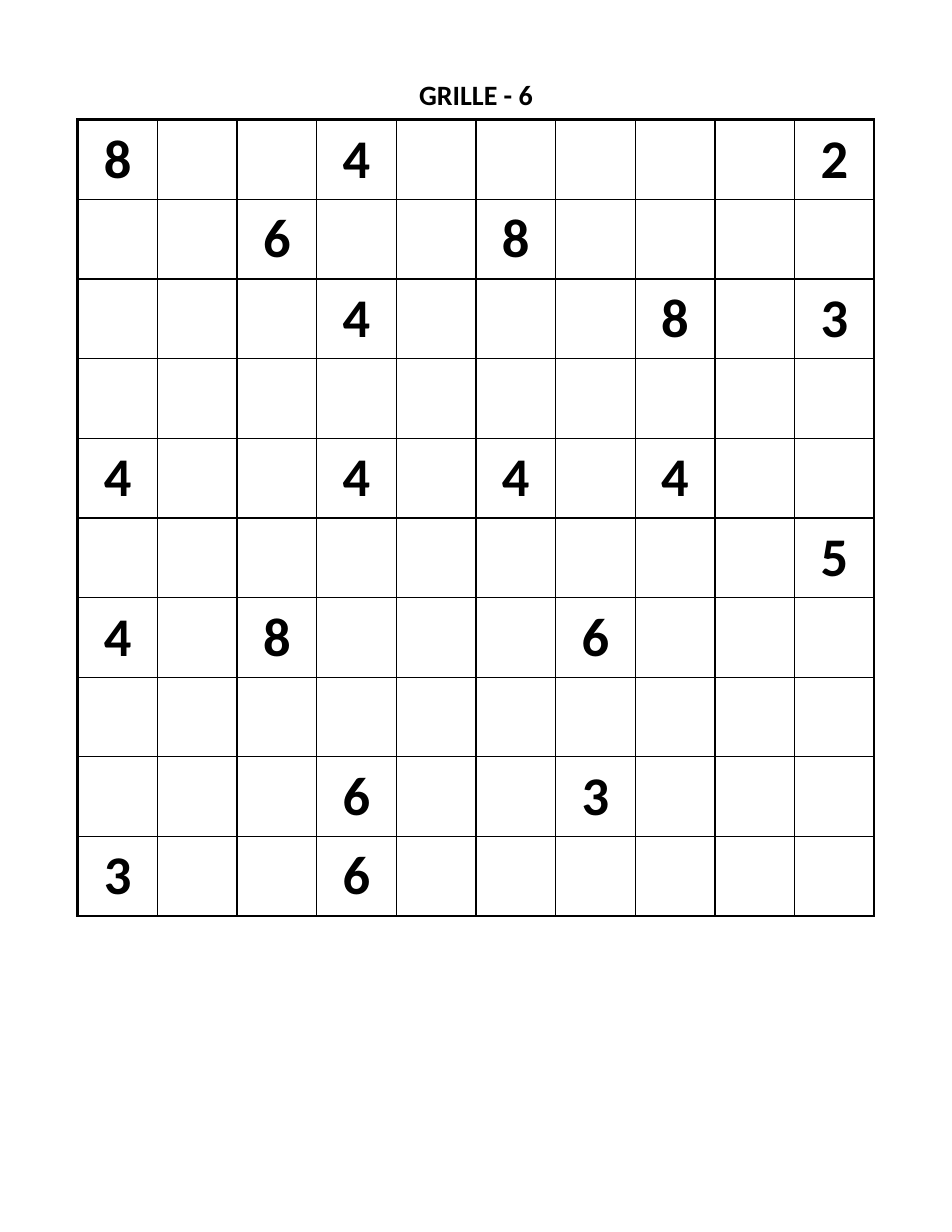
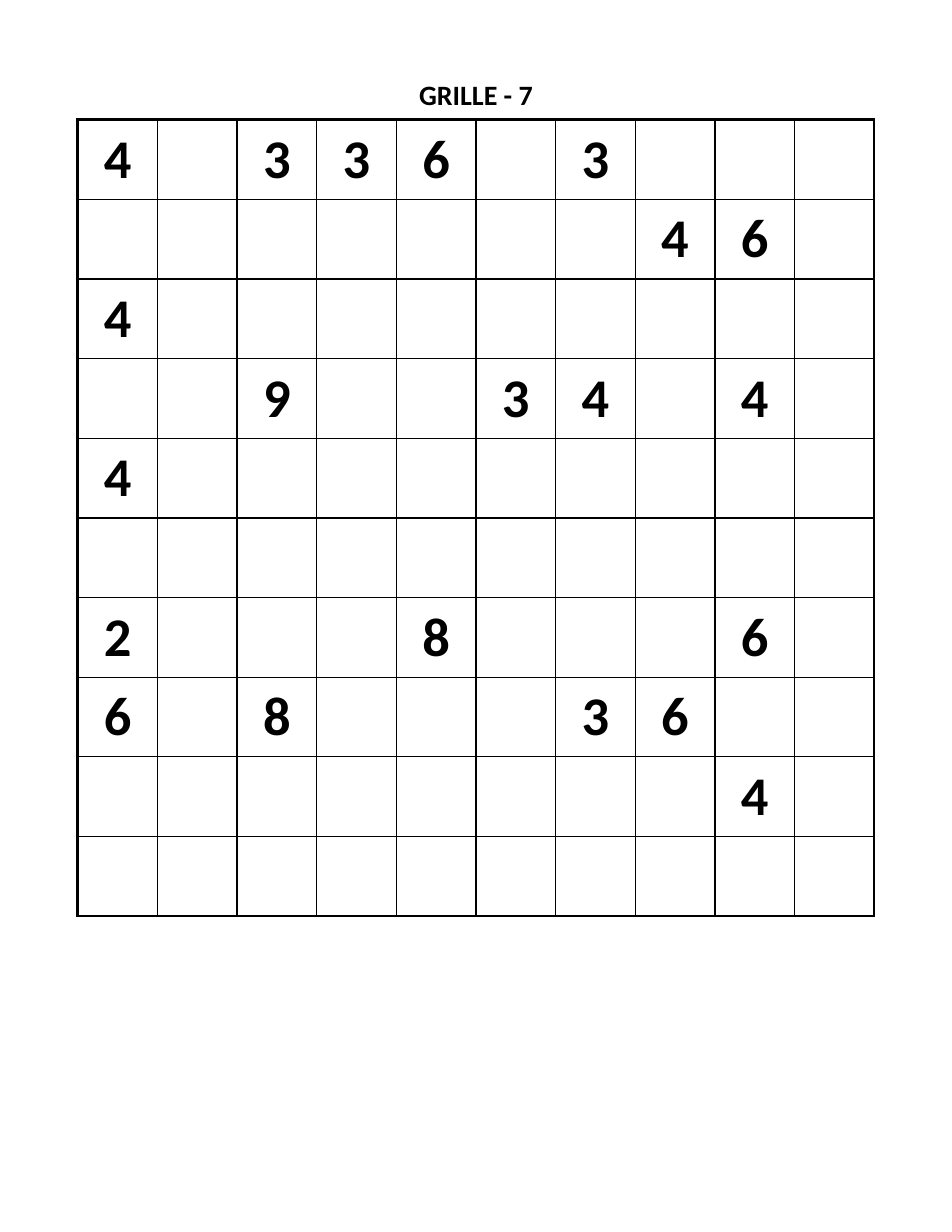
from pptx import Presentation
from pptx import util as u
from pptx.dml.color import RGBColor
from pptx.enum import text
from pptx.oxml import parse_xml
from pptx.oxml.ns import nsdecls

COLORS = {"ink": "000000", "paper": "FFFFFF"}
FONT = "Calibri"

# Shared layout, in points
PAGE_W, PAGE_H = 612, 792
MARGIN = 50
TITLE_H = 22
GRID_TOP = 77
SIZE = 10
CELL = 51.2
THIN, THICK = 1, 2

# Clues of each grid; a dot is an empty cell
GRIDS = {
    6: ["8..4.....2",
        "..6..8....",
        "...4...8.3",
        "..........",
        "4..4.4.4..",
        ".........5",
        "4.8...6...",
        "..........",
        "...6..3...",
        "3..6......"],
    7: ["4.336.3...",
        ".......46.",
        "4.........",
        "..9..34.4.",
        "4.........",
        "..........",
        "2...8...6.",
        "6.8...36..",
        "........4.",
        ".........."],
}


def rgb(name):
    return RGBColor.from_string(COLORS[name])


def write(tf, words, size):
    """Put one centred bold line into a text frame."""
    tf.text = words
    p = tf.paragraphs[0]
    p.alignment = text.PP_ALIGN.CENTER
    for r in p.runs:
        r.font.name, r.font.size, r.font.bold = FONT, u.Pt(size), True
        r.font.color.rgb = rgb("ink")


def add_title(slide, words):
    sp = slide.shapes.title
    sp.left, sp.top = u.Pt(MARGIN), u.Pt(MARGIN)
    sp.width, sp.height = u.Pt(PAGE_W - 2 * MARGIN), u.Pt(TITLE_H)
    tf = sp.text_frame
    tf.margin_left = tf.margin_right = tf.margin_top = tf.margin_bottom = 0
    tf.vertical_anchor = text.MSO_ANCHOR.TOP
    tf.word_wrap = True
    tf.auto_size = text.MSO_AUTO_SIZE.SHAPE_TO_FIT_TEXT
    write(tf, words, 18)


def set_borders(cell, row, col):
    """Thick lines on the outer edge of the grid, thin ones inside."""
    last = SIZE - 1
    outer = {"L": col == 0, "R": col == last, "T": row == 0, "B": row == last}
    tcPr = cell._tc.get_or_add_tcPr()
    for i, (side, is_outer) in enumerate(outer.items()):
        width = u.Pt(THICK if is_outer else THIN)
        tcPr.insert(i, parse_xml(
            f'<a:ln{side} {nsdecls("a")} w="{width}"><a:solidFill>'
            f'<a:srgbClr val="{COLORS["ink"]}"/></a:solidFill></a:ln{side}>'))


def add_grid(slide, clues):
    side = u.Pt(SIZE * CELL)
    table = slide.shapes.add_table(
        SIZE, SIZE, u.Pt(MARGIN), u.Pt(GRID_TOP), side, side).table
    table.first_row = table.horz_banding = False
    for line in [*table.columns]:
        line.width = u.Pt(CELL)
    for row, marks in enumerate(clues):
        table.rows[row].height = u.Pt(CELL)
        for col, mark in enumerate(marks):
            cell = table.cell(row, col)
            cell.margin_left = cell.margin_right = 0
            cell.margin_top = cell.margin_bottom = 0
            cell.vertical_anchor = text.MSO_ANCHOR.MIDDLE
            cell.fill.solid()
            cell.fill.fore_color.rgb = rgb("paper")
            set_borders(cell, row, col)
            if mark != ".":
                write(cell.text_frame, mark, 35)


def main():
    prs = Presentation()
    prs.slide_width, prs.slide_height = u.Pt(PAGE_W), u.Pt(PAGE_H)
    title_only = prs.slide_layouts[5]
    for number, clues in GRIDS.items():
        slide = prs.slides.add_slide(title_only)
        add_title(slide, f"GRILLE - {number}")
        add_grid(slide, clues)
    prs.save("out.pptx")


if __name__ == "__main__":
    main()
